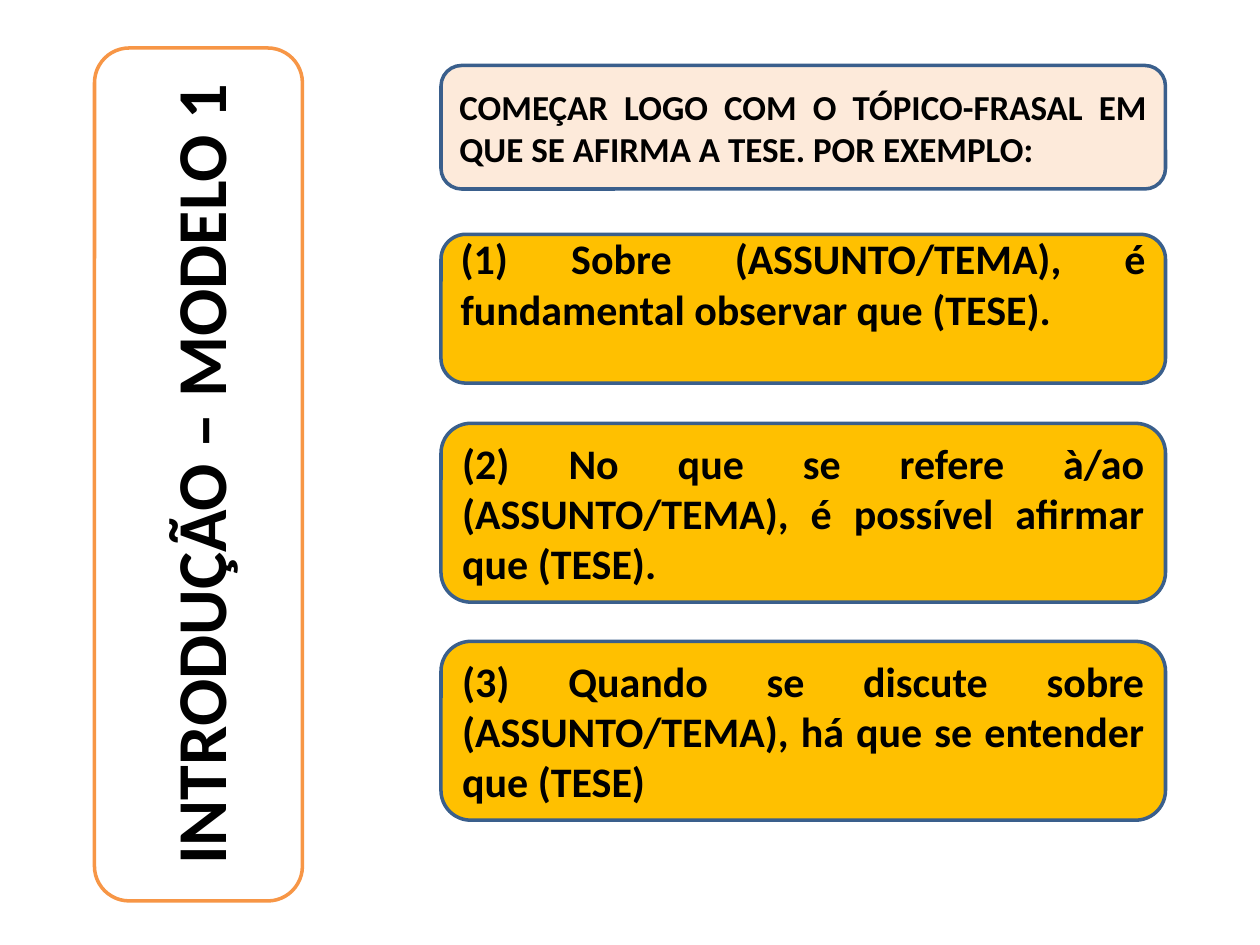
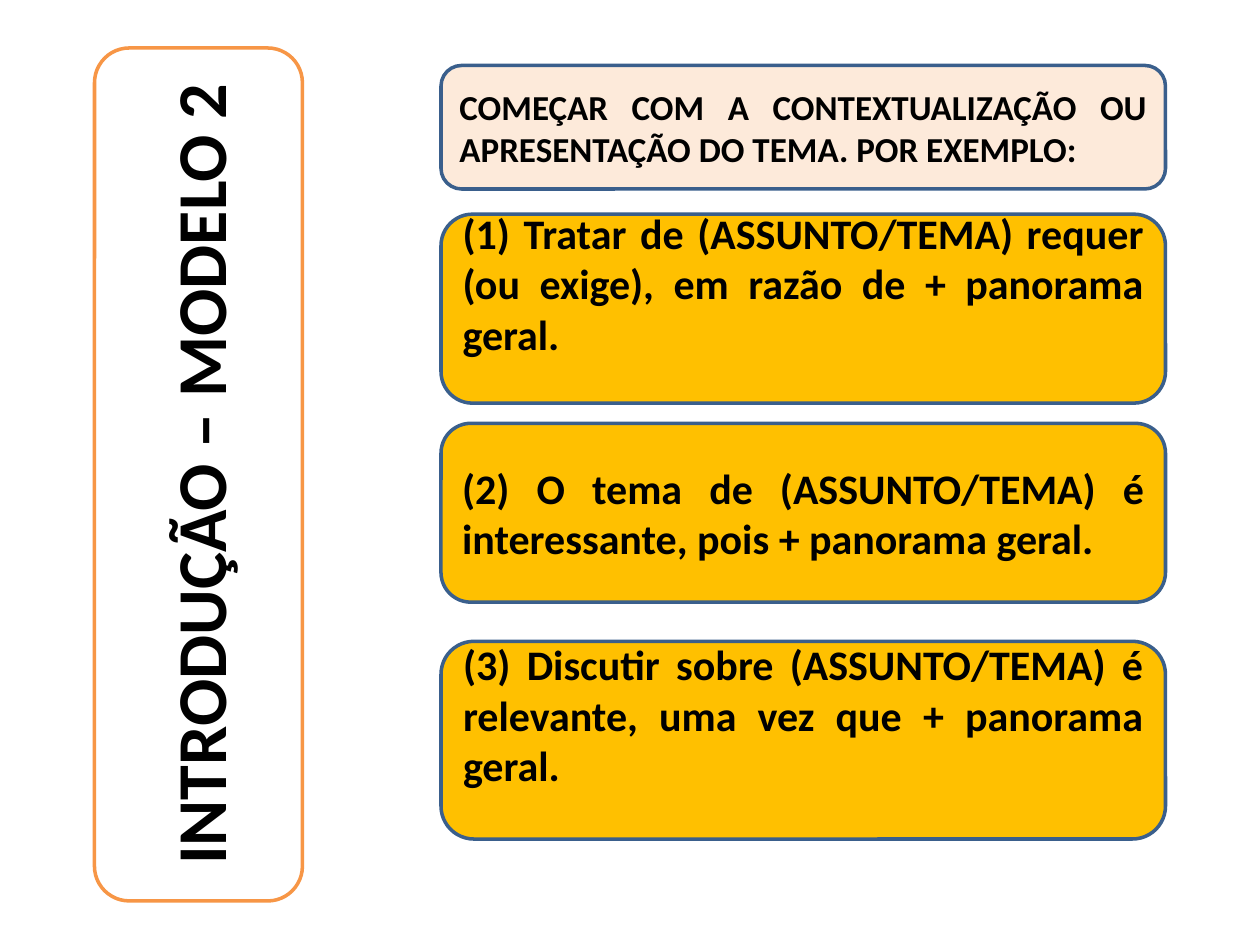
from dataclasses import dataclass

from pptx import Presentation
from pptx.dml.color import RGBColor
from pptx.enum.shapes import MSO_SHAPE
from pptx.enum.text import MSO_ANCHOR, MSO_AUTO_SIZE, PP_ALIGN
from pptx.shapes.autoshape import Shape
from pptx.slide import Slide
from pptx.util import Pt

COLORS = {
    "text": "000000",
    "title_fill": "FFFFFF",
    "title_line": "F79646",
    "guidance": "FDEADA",
    "example": "FFC000",
    "box_line": "3A5F8C",
}
FONT = "Calibri"
TITLE_SIZE, GUIDANCE_SIZE, EXAMPLE_SIZE = 40, 20, 24
BOX_LEFT, BOX_WIDTH = 252, 414
INSET = 3.6
RAISED_INSET = INSET + 29.3


@dataclass(frozen=True)
class Frame:
    left: float
    top: float
    width: float
    height: float
    rotation: float = 0


@dataclass(frozen=True)
class Example:
    text: str
    top: float
    height: float = 102.2
    raised: bool = False


@dataclass(frozen=True)
class Model:
    title: str
    guidance: str
    examples: tuple[Example, ...]


TITLE_FRAME = Frame(-130.3, 211.7, 487.4, 118.8, 270)
GUIDANCE_FRAME = Frame(BOX_LEFT, 37.4, BOX_WIDTH, 70.6)

MODELS = (
    Model(
        "INTRODUÇÃO – MODELO 1",
        "COMEÇAR LOGO COM O TÓPICO-FRASAL EM QUE SE AFIRMA A TESE. POR EXEMPLO:",
        (
            Example("(1) Sobre (ASSUNTO/TEMA), é fundamental observar que (TESE).",
                    133.9, 85, raised=True),
            Example("(2) No que se refere à/ao (ASSUNTO/TEMA), é possível afirmar que (TESE).",
                    241.9),
            Example("(3) Quando se discute sobre (ASSUNTO/TEMA), há que se entender que (TESE)",
                    366.5),
        ),
    ),
    Model(
        "INTRODUÇÃO – MODELO 2",
        "COMEÇAR COM A CONTEXTUALIZAÇÃO OU APRESENTAÇÃO DO TEMA. POR EXEMPLO:",
        (
            Example("(1) Tratar de (ASSUNTO/TEMA) requer (ou exige), em razão de + panorama geral.",
                    122.4, 108, raised=True),
            Example("(2) O tema de (ASSUNTO/TEMA) é interessante, pois + panorama geral.",
                    241.9),
            Example("(3) Discutir sobre (ASSUNTO/TEMA) é relevante, uma vez que + panorama geral.",
                    366.5, 113, raised=True),
        ),
    ),
)


def apply_format(target: object, values: dict[str, object]) -> None:
    for name, value in values.items():
        setattr(target, name, value)


def place(shape: Shape, frame: Frame) -> None:
    apply_format(shape, {
        "left": Pt(frame.left),
        "top": Pt(frame.top),
        "width": Pt(frame.width),
        "height": Pt(frame.height),
        "rotation": frame.rotation,
    })


def add_rounded_box(slide: Slide, frame: Frame, fill: str, line: str) -> Shape:
    shape = slide.shapes.add_shape(MSO_SHAPE.ROUNDED_RECTANGLE, 0, 0, 0, 0)
    place(shape, frame)
    shape.shadow.inherit = False
    shape.fill.solid()
    shape.fill.fore_color.rgb = RGBColor.from_string(COLORS[fill])
    shape.line.color.rgb = RGBColor.from_string(COLORS[line])
    shape.line.width = Pt(2)
    return shape


def write_text(shape: Shape, text: str, size: float, alignment: PP_ALIGN,
               bottom_inset: float = INSET) -> None:
    apply_format(shape.text_frame, {
        "text": text,
        "word_wrap": True,
        "auto_size": MSO_AUTO_SIZE.NONE,
        "vertical_anchor": MSO_ANCHOR.MIDDLE,
        "margin_top": Pt(INSET),
        "margin_bottom": Pt(bottom_inset),
    })
    paragraph = shape.text_frame.paragraphs[0]
    paragraph.alignment = alignment
    font = paragraph.runs[0].font
    apply_format(font, {"name": FONT, "size": Pt(size), "bold": True})
    font.color.rgb = RGBColor.from_string(COLORS["text"])


def add_title(slide: Slide, text: str) -> None:
    band = add_rounded_box(slide, TITLE_FRAME, "title_fill", "title_line")
    title = slide.shapes.title
    band.element.addnext(title.element)
    place(title, TITLE_FRAME)
    write_text(title, text, TITLE_SIZE, PP_ALIGN.CENTER)


def add_model_slide(presentation: Presentation, model: Model) -> None:
    slide = presentation.slides.add_slide(presentation.slide_layouts[5])
    add_title(slide, model.title)
    guidance = add_rounded_box(slide, GUIDANCE_FRAME, "guidance", "box_line")
    write_text(guidance, model.guidance, GUIDANCE_SIZE, PP_ALIGN.JUSTIFY)
    for example in model.examples:
        frame = Frame(BOX_LEFT, example.top, BOX_WIDTH, example.height)
        box = add_rounded_box(slide, frame, "example", "box_line")
        write_text(box, example.text, EXAMPLE_SIZE, PP_ALIGN.JUSTIFY,
                   RAISED_INSET if example.raised else INSET)


def main() -> None:
    presentation = Presentation()
    apply_format(presentation, {"slide_width": Pt(720), "slide_height": Pt(540)})
    for model in MODELS:
        add_model_slide(presentation, model)
    presentation.save("out.pptx")


if __name__ == "__main__":
    main()
